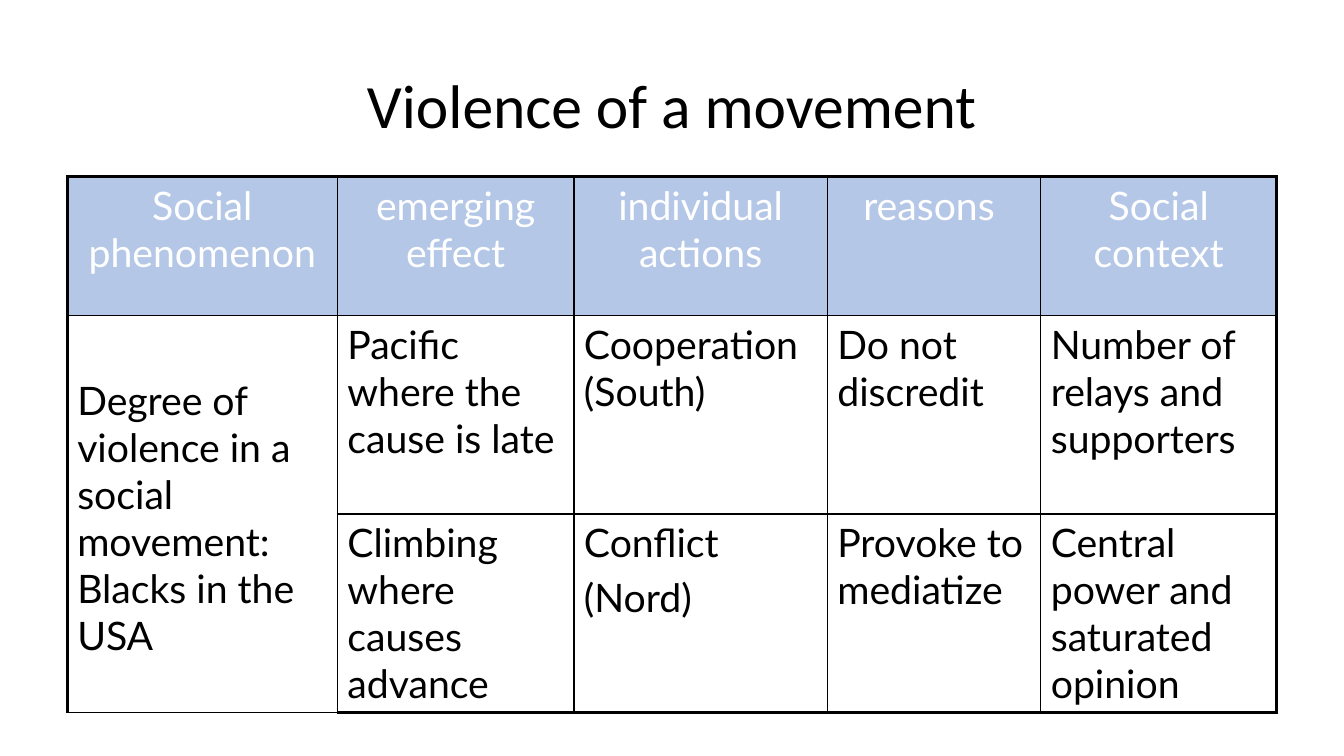
import pptx
import pptx.util
import pptx.dml.color
import pptx.enum.text
import lxml.etree
from pptx.oxml.ns import qn

Pt = pptx.util.Pt
ALIGN = pptx.enum.text.PP_ALIGN
ANCHOR = pptx.enum.text.MSO_ANCHOR

COLORS = {"ink": "000000", "paper": "FFFFFF", "header": "B4C7E7"}
COLUMN_WIDTHS = [193, 169, 181, 152.5, 168.5]
ROW_HEIGHTS = [99.4, 141.8, 141.8]
THIN, THICK = 1, 2.25
ROWS = [
    [["Social phenomenon"], ["emerging effect"], ["individual actions"],
     ["reasons "], ["Social context"]],
    [["Degree of violence in a social movement: Blacks in the USA"],
     ["Pacific where the cause is late"], ["Cooperation (South)"],
     ["Do not discredit"], ["Number of relays and supporters"]],
    [[], ["Climbing where causes advance"], ["Conflict", "(Nord)"],
     ["Provoke to mediatize"], ["Central power and saturated opinion"]],
]


def color(name):
    """Return the named colour."""
    return pptx.dml.color.RGBColor.from_string(COLORS[name])


def add_span(para, text, size, font, ink):
    """Add one formatted run to a paragraph."""
    span = para.add_run()
    span.text = text
    span.font.size = Pt(size)
    span.font.name = font
    span.font.color.rgb = color(ink)


def set_title(page, text):
    """Place and format the title."""
    box = page.shapes.title
    box.left, box.top, box.width, box.height = Pt(48), Pt(23), Pt(864), Pt(109)
    box.text_frame.vertical_anchor = ANCHOR.MIDDLE
    para = box.text_frame.paragraphs[0]
    para.alignment = ALIGN.CENTER
    para.line_spacing = 0.9
    add_span(para, text, 44, "Calibri", "ink")


def set_borders(cell, row, column):
    """Draw thick borders on the outer edges and thin ones inside."""
    outer = {"L": column == 0, "R": column == len(COLUMN_WIDTHS) - 1,
             "T": row == 0, "B": row == len(ROW_HEIGHTS) - 1}
    properties = cell._tc.get_or_add_tcPr()
    for side, is_outer in outer.items():
        line = lxml.etree.SubElement(properties, qn(f"a:ln{side}"))
        line.set("w", str(int(Pt(THICK if is_outer else THIN))))
        fill = lxml.etree.SubElement(line, qn("a:solidFill"))
        lxml.etree.SubElement(fill, qn("a:srgbClr")).set("val", COLORS["ink"])


def fill_cell(cell, texts, is_header):
    """Fill a cell and write its paragraphs."""
    cell.fill.solid()
    cell.fill.fore_color.rgb = color("header" if is_header else "paper")
    frame = cell.text_frame
    for index, text in enumerate(texts):
        para = frame.add_paragraph() if index else frame.paragraphs[0]
        para.alignment = ALIGN.CENTER if is_header else ALIGN.LEFT
        if index:
            para.space_before = Pt(5.6)
        add_span(para, text, 28, "Lato", "paper" if is_header else "ink")


def add_grid(page):
    """Add the table with its merged first column."""
    frame = page.shapes.add_table(len(ROWS), len(COLUMN_WIDTHS), Pt(48), Pt(126),
                                  Pt(sum(COLUMN_WIDTHS)), Pt(sum(ROW_HEIGHTS)))
    table = frame.table
    table.first_row = table.horz_banding = False
    for column, width in zip(table.columns, COLUMN_WIDTHS):
        column.width = Pt(width)
    for row, height in zip(table.rows, ROW_HEIGHTS):
        row.height = Pt(height)
    for row, cells in enumerate(ROWS):
        for column, texts in enumerate(cells):
            cell = table.cell(row, column)
            set_borders(cell, row, column)
            fill_cell(cell, texts, row == 0)
    phenomenon = table.cell(1, 0)
    phenomenon.merge(table.cell(2, 0))
    phenomenon.margin_top = Pt(43.6)


def main():
    """Build the deck."""
    deck = pptx.Presentation()
    deck.slide_width, deck.slide_height = Pt(960), Pt(540)
    page = deck.slides.add_slide(deck.slide_layouts[5])
    set_title(page, "Violence of a movement")
    add_grid(page)
    deck.save("out.pptx")


if __name__ == "__main__":
    main()
